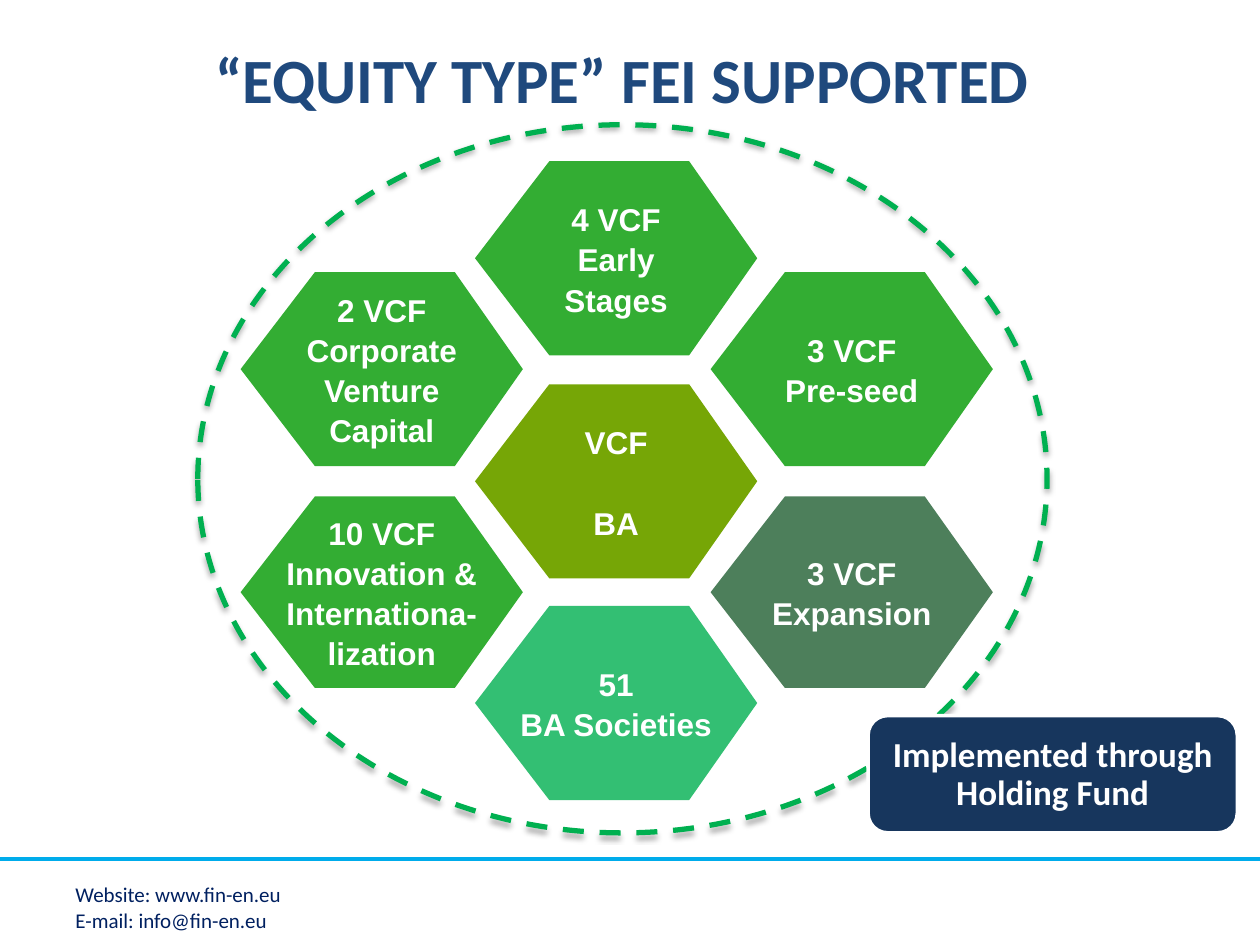
from lxml.etree import SubElement
from pptx import Presentation
from pptx.dml.color import RGBColor
from pptx.enum.dml import MSO_LINE
from pptx.enum.shapes import MSO_CONNECTOR, MSO_SHAPE
from pptx.enum.text import MSO_ANCHOR as Anchor, PP_ALIGN as Align
from pptx.oxml.ns import qn
from pptx.util import Inches, Pt


def color(value):
    return RGBColor.from_string(value)


def write(lines, left, top, width, height, size=18, font="Arial", ink="FFFFFF",
          bold=True, align=Align.CENTER, anchor=Anchor.MIDDLE, spacing=1.0,
          margins=(0, 0), wrap=True, gap=0):
    box = page.shapes.add_textbox(Inches(left), Inches(top), Inches(width), Inches(height))
    frame = box.text_frame
    frame.word_wrap = wrap
    frame.vertical_anchor = anchor
    frame.margin_left = frame.margin_right = Inches(margins[0])
    frame.margin_top = frame.margin_bottom = Inches(margins[1])
    for index, line in enumerate(lines):
        para = frame.paragraphs[0] if index == 0 else frame.add_paragraph()
        para.alignment = align
        para.line_spacing = spacing
        if index and gap:
            para.space_before = Pt(gap)
        span = para.add_run()
        span.text = line
        span.font.name = font
        span.font.size = Pt(size)
        span.font.bold = bold
        span.font.color.rgb = color(ink)


deck = Presentation()
deck.slide_width, deck.slide_height = Inches(10), Inches(7.5)
page = deck.slides.add_slide(deck.slide_layouts[6])

# Footer rule
rule = page.shapes.add_connector(
    MSO_CONNECTOR.STRAIGHT, 0, Inches(6.82), Inches(10), Inches(6.82))
rule.line.color.rgb = color("00ACEB")
rule.line.width = Pt(2.25)
SubElement(rule._element.spPr, qn("a:effectLst"))

# Hexagons: left, top, height, fill, opacity in percent, label, label width, label gap
LEFT, MIDDLE, RIGHT = 1.91, 3.77, 5.64
hexagons = [
    (MIDDLE, 4.81, 1.54, "00B050", 80, ["51", "BA Societies"], 1.53, 0),
    (LEFT, 2.16, 1.54, "009900", 80, ["2 VCF", "Corporate", "Venture", "Capital"], 1.21, 0),
    (MIDDLE, 1.28, 1.54, "009900", 80, ["4 VCF", "Early", "Stages"], 0.83, 0),
    (RIGHT, 2.16, 1.54, "009900", 80, ["3 VCF", "Pre-seed"], 1.07, 0),
    (LEFT, 3.94, 1.52, "009900", 80,
     ["10 VCF", "Innovation &", "Internationa-", "lization"], 1.58, 0),
    (MIDDLE, 3.05, 1.54, "76A606", 100, ["VCF", "BA"], 0.5, 23),
    (RIGHT, 3.94, 1.52, "216032", 80, ["3 VCF", "Expansion"], 1.28, 0),
]
WIDTH, LINE_HEIGHT = 2.24, 0.32
for left, top, height, fill, opacity, *_ in hexagons:
    middle, bottom = top + height / 2, top + height
    corners = [(left + 0.59, top), (left + 1.7, top), (left + WIDTH, middle),
               (left + 1.7, bottom), (left + 0.59, bottom), (left, middle)]
    points = [(Inches(x), Inches(y)) for x, y in corners]
    builder = page.shapes.build_freeform(*points[0])
    builder.add_line_segments(points[1:], close=True)
    hexagon = builder.convert_to_shape()
    hexagon.fill.solid()
    hexagon.fill.fore_color.rgb = color(fill)
    hexagon.line.fill.background()
    hexagon.shadow.inherit = False
    if opacity < 100:
        tint = hexagon._element.spPr.find(qn("a:solidFill"))[0]
        SubElement(tint, qn("a:alpha"), val=str(opacity * 1000))

# Hexagon labels, centred on their hexagons
for left, top, height, _, _, lines, width, gap in hexagons:
    tall = LINE_HEIGHT * (len(lines) + (1 if gap else 0))
    write(lines, left + (WIDTH - width) / 2, top + (height - tall) / 2, width, tall,
          spacing=1.06, wrap=False, gap=gap)

# Dashed ring with a soft shadow
ring = page.shapes.add_shape(
    MSO_SHAPE.OVAL, Inches(1.57), Inches(0.99), Inches(6.74), Inches(5.62))
ring.fill.background()
ring.line.color.rgb = color("00B050")
ring.line.width = Pt(3)
ring.line.dash_style = MSO_LINE.DASH
ring.shadow.inherit = False
shadow = SubElement(
    ring._element.spPr.find(qn("a:effectLst")), qn("a:outerShdw"),
    blurRad=str(Pt(3.1)), dist=str(Pt(1.8)), dir="5400000", rotWithShape="0")
shade = SubElement(shadow, qn("a:srgbClr"), val="000000")
SubElement(shade, qn("a:alpha"), val="35000")

# Contact details and title
write(["Website: www.fin-en.eu", "E-mail: info@fin-en.eu"], 0.5, 6.95, 2.85, 0.4,
      size=12, font="Calibri", ink="002060", bold=False, align=Align.LEFT,
      anchor=Anchor.TOP, margins=(0.1, 0.05))
write(["“EQUITY TYPE” FEI SUPPORTED"], 1.61, 0.21, 7.8, 0.82, size=36, font="Calibri",
      ink="1F497D", align=Align.LEFT, margins=(0.1, 0.05))

# Holding fund callout
callout = page.shapes.add_shape(
    MSO_SHAPE.ROUNDED_RECTANGLE, Inches(6.89), Inches(5.68), Inches(2.93), Inches(0.93))
callout.fill.solid()
callout.fill.fore_color.rgb = color("17365D")
callout.line.color.rgb = color("FFFFFF")
callout.line.width = Pt(2)
callout.shadow.inherit = False
write(["Implemented through Holding Fund"], 6.92, 5.73, 2.87, 0.84, size=20,
      font="Calibri", spacing=0.9, margins=(0.07, 0.07))

deck.save("out.pptx")
